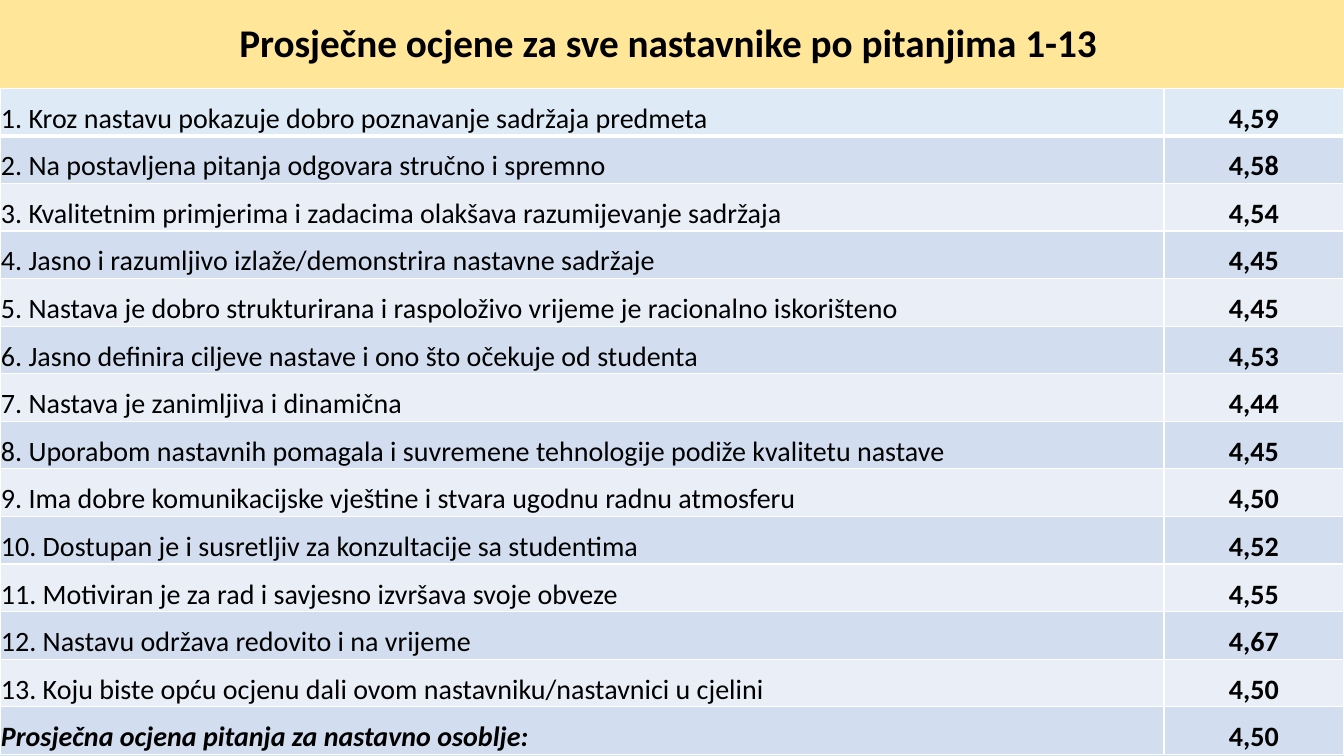
from pptx import Presentation
from pptx.dml.color import RGBColor
from pptx.enum.text import MSO_ANCHOR, PP_ALIGN
from pptx.oxml import parse_xml
from pptx.oxml.ns import nsdecls
from pptx.util import Pt

COLORS = {
    "text": "000000", "border": "FFFFFF",
    "first": "DEEBF7", "dark": "D2DEEF", "light": "EAEFF7",
    "sand": "FFE699", "blue": "B5D2EC", "pale": "CEE1F2",
}
FONT = "Calibri"

RATINGS = [
    ("1. Kroz nastavu pokazuje dobro poznavanje sadržaja predmeta", "4,59"),
    ("2. Na postavljena pitanja odgovara stručno i spremno", "4,58"),
    ("3. Kvalitetnim primjerima i zadacima olakšava razumijevanje sadržaja", "4,54"),
    ("4. Jasno i razumljivo izlaže/demonstrira nastavne sadržaje", "4,45"),
    ("5. Nastava je dobro strukturirana i raspoloživo vrijeme je racionalno iskorišteno", "4,45"),
    ("6. Jasno definira ciljeve nastave i ono što očekuje od studenta", "4,53"),
    ("7. Nastava je zanimljiva i dinamična", "4,44"),
    ("8. Uporabom nastavnih pomagala i suvremene tehnologije podiže kvalitetu nastave", "4,45"),
    ("9. Ima dobre komunikacijske vještine i stvara ugodnu radnu atmosferu", "4,50"),
    ("10. Dostupan je i susretljiv za konzultacije sa studentima", "4,52"),
    ("11. Motiviran je za rad i savjesno izvršava svoje obveze", "4,55"),
    ("12. Nastavu održava redovito i na vrijeme", "4,67"),
    ("13. Koju biste opću ocjenu dali ovom nastavniku/nastavnici u cjelini", "4,50"),
    ("Prosječna ocjena pitanja za nastavno osoblje:", "4,50"),
]


def add_run(paragraph, text, size, bold=False, italic=False):
    run = paragraph.add_run()
    run.text = text
    run.font.name = FONT
    run.font.size = Pt(size)
    run.font.bold = bold
    run.font.italic = italic
    run.font.color.rgb = RGBColor.from_string(COLORS["text"])


def set_borders(cell, top, bottom):
    widths = {"lnL": 1, "lnR": 1, "lnT": top, "lnB": bottom}
    for index, (side, width) in enumerate(widths.items()):
        cell._tc.get_or_add_tcPr().insert(index, parse_xml(
            f'<a:{side} {nsdecls("a")} w="{Pt(width)}"><a:solidFill>'
            f'<a:srgbClr val="{COLORS["border"]}"/></a:solidFill></a:{side}>'))


prs = Presentation()
prs.slide_width, prs.slide_height = Pt(960), Pt(540)
slide = prs.slides.add_slide(prs.slide_layouts[6])

# Background: vertical gradient from sand to blue
stops = "".join(
    f'<a:gs pos="{percent * 1000}"><a:srgbClr val="{COLORS[name]}"/></a:gs>'
    for percent, name in [(13, "sand"), (48, "blue"), (67, "blue"), (100, "pale")])
slide._element.cSld.insert(0, parse_xml(
    f'<p:bg {nsdecls("p", "a")}><p:bgPr><a:gradFill rotWithShape="1">'
    f'<a:gsLst>{stops}</a:gsLst><a:lin ang="5400000" scaled="0"/></a:gradFill>'
    '<a:effectLst/></p:bgPr></p:bg>'))

# Ratings table
ratings = slide.shapes.add_table(
    len(RATINGS), 2, Pt(0), Pt(63), Pt(960), Pt(34 * len(RATINGS))).table
ratings.columns[0].width = Pt(831.4)
ratings.columns[1].width = Pt(128.6)

for row, texts in enumerate(RATINGS):
    ratings.rows[row].height = Pt(34)
    is_average = row == len(RATINGS) - 1
    band = "first" if row == 0 else "dark" if row % 2 else "light"
    for col, text in enumerate(texts):
        cell = ratings.cell(row, col)
        cell.fill.solid()
        cell.fill.fore_color.rgb = RGBColor.from_string(COLORS[band])
        set_borders(cell, top=3 if row == 1 else 1, bottom=3 if row == 0 else 1)
        cell.vertical_anchor = MSO_ANCHOR.BOTTOM
        cell.margin_left = cell.margin_right = cell.margin_top = Pt(0.7)
        cell.margin_bottom = Pt(0)
        paragraph = cell.text_frame.paragraphs[0]
        paragraph.alignment = PP_ALIGN.CENTER if col else PP_ALIGN.LEFT
        add_run(paragraph, text, 20, bold=col == 1 or is_average,
                italic=is_average and col == 0)

# Title
title = slide.shapes.add_textbox(Pt(137.5), Pt(9.4), Pt(685.5), Pt(41)).text_frame
title.word_wrap = True
title.paragraphs[0].alignment = PP_ALIGN.CENTER
add_run(title.paragraphs[0], "Prosječne ocjene za sve nastavnike po pitanjima 1-13 ", 28, bold=True)

prs.save("out.pptx")
